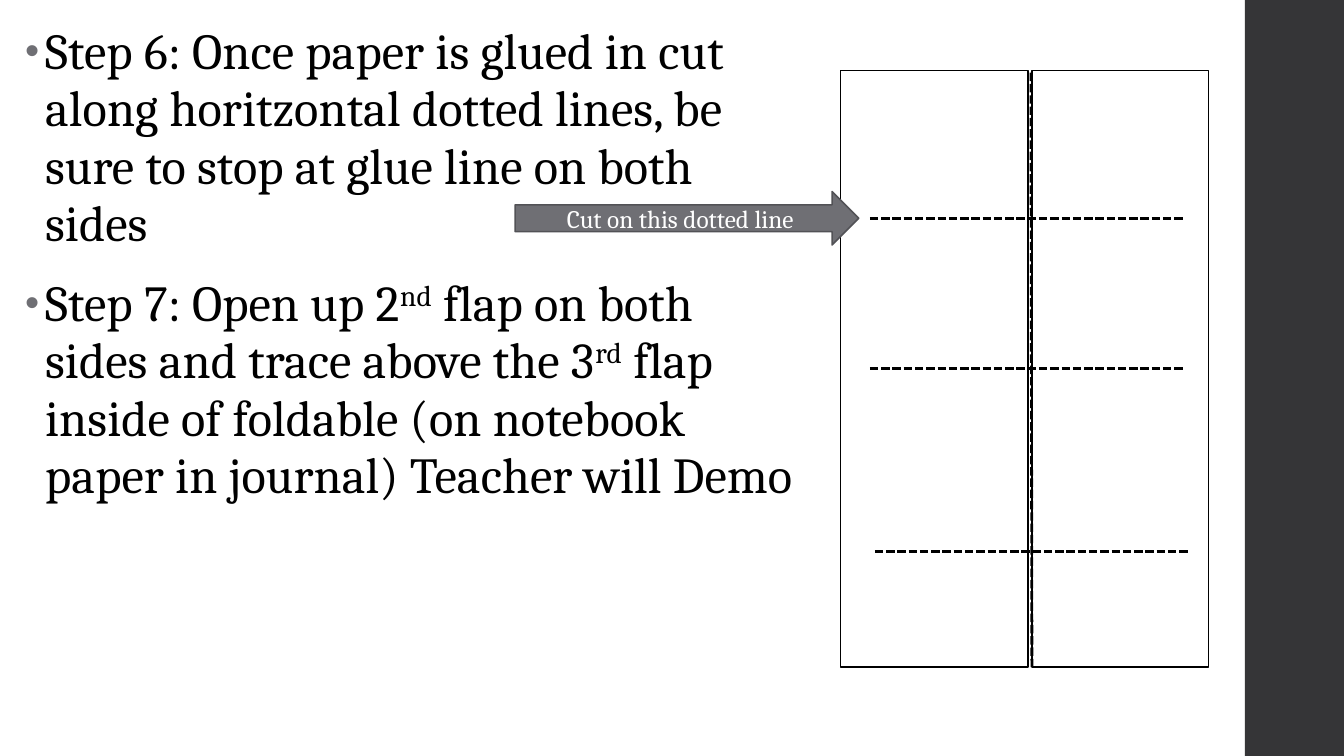
from dataclasses import dataclass

from lxml.etree import SubElement
from pptx import Presentation
from pptx.dml.color import RGBColor
from pptx.enum.dml import MSO_LINE
from pptx.enum.shapes import MSO_CONNECTOR, MSO_SHAPE
from pptx.enum.text import MSO_ANCHOR, PP_ALIGN
from pptx.oxml.ns import qn
from pptx.util import Pt


@dataclass(frozen=True)
class Theme:
    font: str = "Cambria"
    body_size: float = 36
    label_size: float = 18
    outline: float = 1.1
    dash: float = 2
    ink: str = "000000"
    paper: str = "FFFFFF"
    sidebar: str = "353537"
    accent: str = "6F6F74"
    accent_edge: str = "525256"


THEME = Theme()

# Each step is a list of (text, is superscript) runs
STEPS = [
    [("Step 6: Once paper is glued in cut along horitzontal dotted lines, "
      "be sure to stop at glue line on both sides", False)],
    [("Step 7: Open up 2", False), ("nd", True),
     (" flap on both sides and trace above the 3", False), ("rd", True),
     (" flap inside of foldable (on notebook paper in journal) "
      "Teacher will Demo", False)],
]


def color(value):
    return RGBColor.from_string(value)


def add_block(slide, kind, box, fill, edge=None):
    shape = slide.shapes.add_shape(kind, *(Pt(length) for length in box))
    shape.shadow.inherit = False
    shape.fill.solid()
    shape.fill.fore_color.rgb = color(fill)
    if edge:
        shape.line.color.rgb = color(edge)
        shape.line.width = Pt(THEME.outline)
    else:
        shape.line.fill.background()
    return shape


def add_dashed_line(slide, *ends):
    line = slide.shapes.add_connector(
        MSO_CONNECTOR.STRAIGHT, *(Pt(length) for length in ends))
    line.line.color.rgb = color(THEME.ink)
    line.line.width = Pt(THEME.dash)
    line.line.dash_style = MSO_LINE.SQUARE_DOT
    SubElement(line._element.spPr, qn("a:effectLst"))


def add_run(paragraph, text, size, ink):
    run = paragraph.add_run()
    run.text = text
    run.font.name = THEME.font
    run.font.size = Pt(size)
    run.font.color.rgb = color(ink)
    return run


def add_bullet(paragraph):
    properties = paragraph._p.get_or_add_pPr()
    properties.set("marL", str(Pt(14.4)))
    properties.set("indent", str(Pt(-14.4)))
    bullet_color = SubElement(properties, qn("a:buClr"))
    SubElement(bullet_color, qn("a:srgbClr"), val=THEME.accent)
    SubElement(properties, qn("a:buSzPct"), val="80000")
    SubElement(properties, qn("a:buFont"), typeface="Arial")
    SubElement(properties, qn("a:buChar"), char="•")


def add_steps(slide, box):
    frame = slide.shapes.add_textbox(*(Pt(length) for length in box)).text_frame
    frame.word_wrap = True
    for index, step in enumerate(STEPS):
        paragraph = frame.add_paragraph() if index else frame.paragraphs[0]
        paragraph.line_spacing = 0.95
        paragraph.space_before = Pt(14)
        paragraph.space_after = Pt(2)
        add_bullet(paragraph)
        for text, superscript in step:
            run = add_run(paragraph, text, THEME.body_size, THEME.ink)
            properties = run.font._element
            properties.set("spc", "10")
            if superscript:
                properties.set("baseline", "30000")


def add_foldable(slide, box):
    left, top, width, height = box
    left_width, right_width = 133.9, 126
    right_start = left + width - right_width

    # Two paper flaps
    for start, flap_width in ((left, left_width), (right_start, right_width)):
        add_block(slide, MSO_SHAPE.RECTANGLE, (start, top, flap_width, height),
                  THEME.paper, THEME.ink)

    # Horizontal cuts, as offsets from the corner of the foldable
    for inset, drop in ((21, 213.1), (21, 105.8), (24.5, 343.4)):
        start, level = left + inset, top + drop
        add_dashed_line(slide, start, level, start + 225, level)

    # Centre fold
    add_dashed_line(slide, right_start, top + height, right_start - 0.7, top)


def add_cut_arrow(slide, box):
    arrow = add_block(slide, MSO_SHAPE.RIGHT_ARROW, box,
                      THEME.accent, THEME.accent_edge)
    frame = arrow.text_frame
    frame.word_wrap = True
    frame.vertical_anchor = MSO_ANCHOR.MIDDLE
    paragraph = frame.paragraphs[0]
    paragraph.alignment = PP_ALIGN.CENTER
    add_run(paragraph, "Cut on this dotted line", THEME.label_size, THEME.paper)


def main():
    presentation = Presentation()
    presentation.slide_width = Pt(960)
    presentation.slide_height = Pt(540)
    slide = presentation.slides.add_slide(presentation.slide_layouts[6])
    slide.background.fill.solid()
    slide.background.fill.fore_color.rgb = color(THEME.paper)

    add_block(slide, MSO_SHAPE.RECTANGLE, (889.2, 0, 70.8, 540), THEME.sidebar)
    add_steps(slide, (10.8, 13, 573.1, 527))
    add_foldable(slide, (600.4, 50.4, 262.7, 426.2))
    add_cut_arrow(slide, (367.9, 136.8, 245.5, 38.2))
    presentation.save("out.pptx")


if __name__ == "__main__":
    main()
